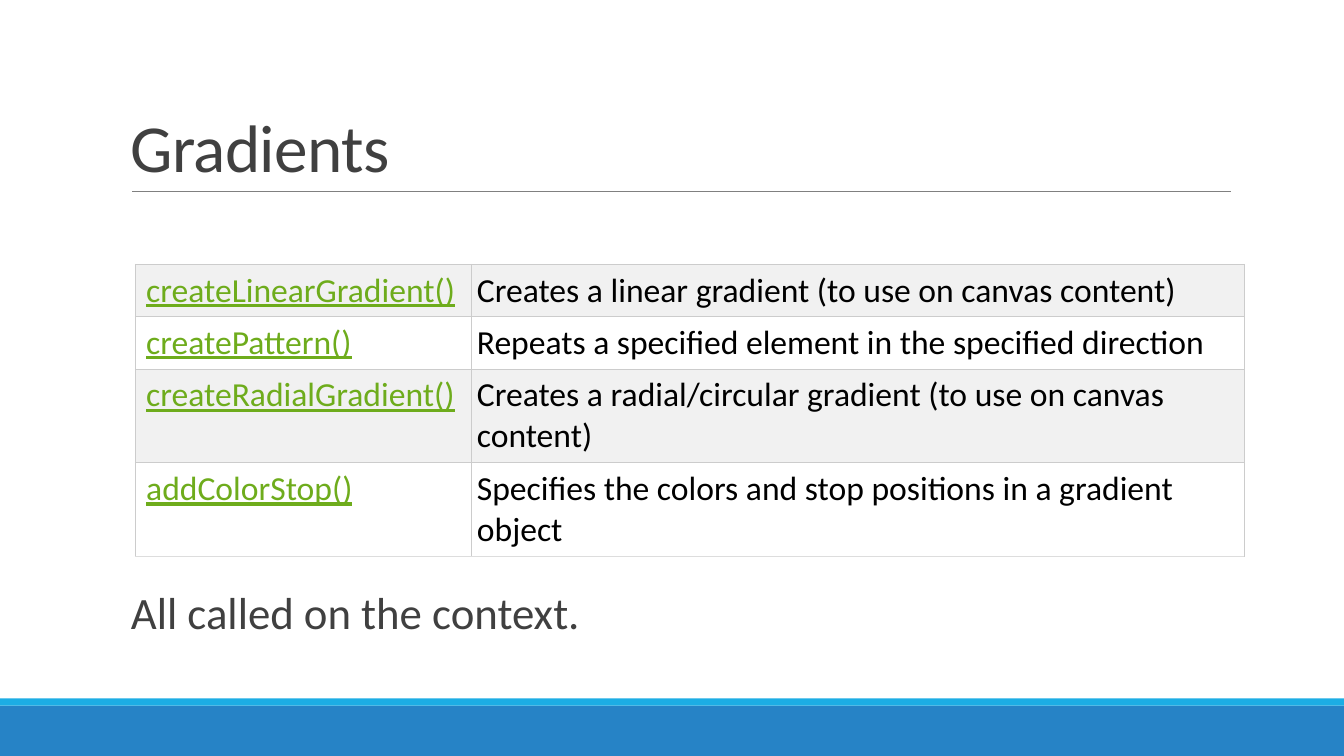
import pptx
import pptx.util
import pptx.dml.color
import pptx.enum.shapes
import pptx.enum.text
import pptx.oxml.ns
import lxml.etree

Inches = pptx.util.Inches
Pt = pptx.util.Pt
RGBColor = pptx.dml.color.RGBColor
qn = pptx.oxml.ns.qn

BLUE = RGBColor(0x26, 0x83, 0xC6)
CYAN = RGBColor(0x1C, 0xAD, 0xE4)
GRAY = RGBColor(0x80, 0x80, 0x80)
DARK = RGBColor(0x40, 0x40, 0x40)
BLACK = RGBColor(0, 0, 0)
GREEN = RGBColor(0x6E, 0xAC, 0x1C)
WHITE = RGBColor(0xFF, 0xFF, 0xFF)
BAND = RGBColor(0xF1, 0xF1, 0xF1)
EDGE = RGBColor(0xCC, 0xCC, 0xCC)
BASE = RGBColor(0xDD, 0xDD, 0xDD)


def add_run(para, text, size, color):
    run = para.add_run()
    run.text = text
    run.font.name = "Calibri"
    run.font.size = Pt(size)
    run.font.color.rgb = color
    return run


def add_edge(cell, side, color):
    line = lxml.etree.SubElement(cell._tc.get_or_add_tcPr(), qn("a:ln" + side), w=str(Pt(0.5)))
    fill = lxml.etree.SubElement(line, qn("a:solidFill"))
    lxml.etree.SubElement(fill, qn("a:srgbClr"), val=str(color))


deck = pptx.Presentation()
deck.slide_width = Inches(13.33)
deck.slide_height = Inches(7.5)
slide = deck.slides.add_slide(deck.slide_layouts[6])
shapes = slide.shapes

for top, height, color in [(7, 0.5, BLUE), (6.93, 0.07, CYAN)]:
    bar = shapes.add_shape(pptx.enum.shapes.MSO_SHAPE.RECTANGLE,
                           0, Inches(top), deck.slide_width, Inches(height))
    bar.shadow.inherit = False
    bar.fill.solid()
    bar.fill.fore_color.rgb = color
    bar.line.fill.background()

rule = shapes.add_connector(pptx.enum.shapes.MSO_CONNECTOR.STRAIGHT,
                            Inches(1.31), Inches(1.9), Inches(12.21), Inches(1.9))
rule.line.color.rgb = GRAY
rule.line.width = Pt(0.5)
lxml.etree.SubElement(rule._element.spPr, qn("a:effectLst"))

title = shapes.add_textbox(Inches(1.2), Inches(0.31), Inches(11), Inches(1.59)).text_frame
title.word_wrap = True
title.vertical_anchor = pptx.enum.text.MSO_ANCHOR.BOTTOM
para = title.paragraphs[0]
para.line_spacing = 0.85
run = add_run(para, "Gradients", 48, DARK)
run._r.get_or_add_rPr().set("spc", "-50")

methods = [
    ("createLinearGradient()", "Creates a linear gradient (to use on canvas content)", 0.52),
    ("createPattern()", "Repeats a specified element in the specified direction", 0.52),
    ("createRadialGradient()", "Creates a radial/circular gradient (to use on canvas content)", 0.93),
    ("addColorStop()", "Specifies the colors and stop positions in a gradient object", 0.93),
]
table = shapes.add_table(len(methods), 2, Inches(1.34), Inches(2.62),
                         Inches(11), Inches(2.9)).table
table.first_row = False
table.horz_banding = False
table.columns[0].width = Inches(3.33)
table.columns[1].width = Inches(7.67)
for row, (name, use, height) in enumerate(methods):
    table.rows[row].height = Inches(height)
    last = row == len(methods) - 1
    for col, text in enumerate((name, use)):
        cell = table.cell(row, col)
        cell.margin_left = Inches(0.06 if col else 0.11)
        cell.margin_right = cell.margin_top = cell.margin_bottom = Inches(0.06)
        for side in "LRTB":
            add_edge(cell, side, BASE if last and side == "B" else EDGE)
        cell.fill.solid()
        cell.fill.fore_color.rgb = WHITE if row % 2 else BAND
        run = add_run(cell.text_frame.paragraphs[0], text, 24, BLACK if col else GREEN)
        run.font.underline = col == 0

note = shapes.add_textbox(Inches(1.2), Inches(5.81), Inches(11), Inches(0.61)).text_frame
note.word_wrap = True
note.margin_right = 0
para = note.paragraphs[0]
para.line_spacing = 0.9
para.space_before = Pt(12)
para.space_after = Pt(2)
add_run(para, "All called on the context.", 32, DARK)

deck.save("out.pptx")
